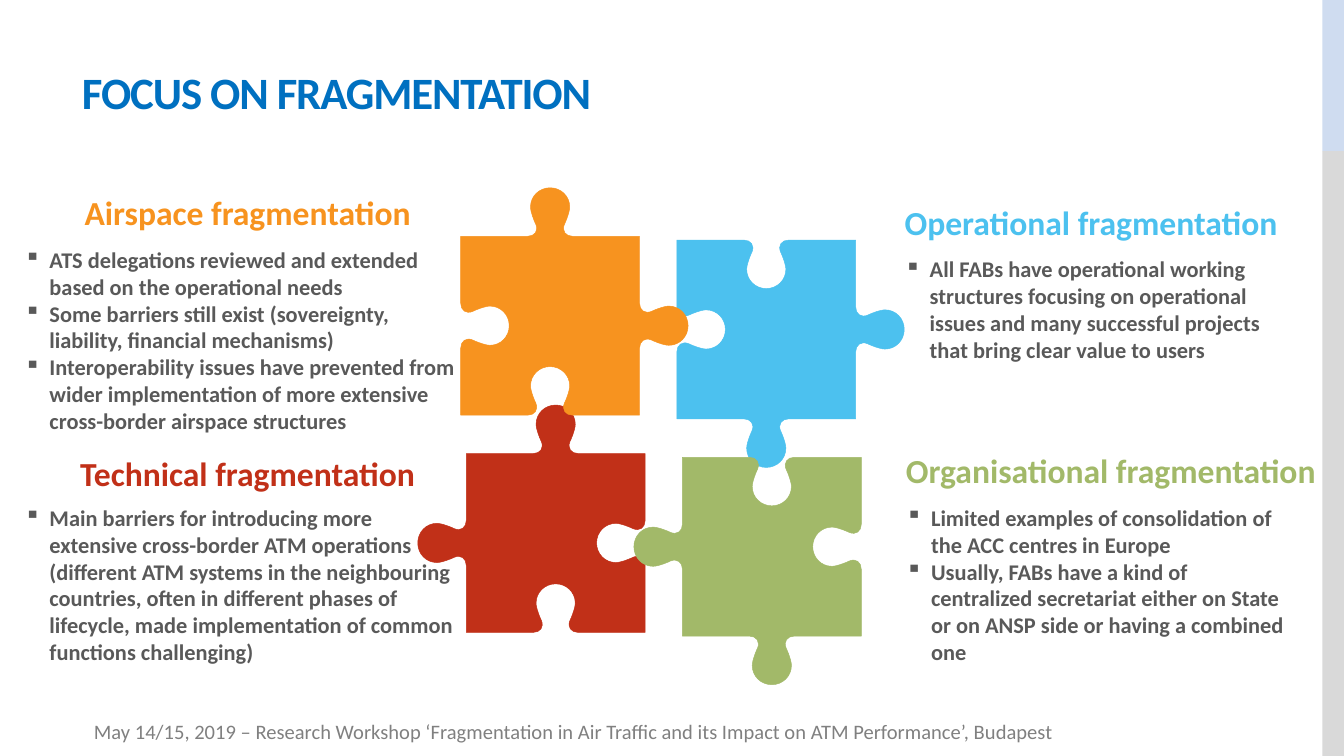
from lxml.etree import SubElement
from pptx import Presentation
from pptx.dml.color import RGBColor
from pptx.enum.shapes import MSO_SHAPE
from pptx.enum.text import MSO_ANCHOR, MSO_AUTO_SIZE, PP_ALIGN
from pptx.oxml.ns import qn
from pptx.util import Pt

COLORS = {
    "title": "0070C0", "body": "595959", "footer": "808080",
    "band_top": "CFDCF0", "band": "D9D9D9",
    "airspace": "F7931F", "operational": "4CC1EF",
    "technical": "C13018", "organisational": "A2B969",
}
FONT = "Calibri"
SIDE = 95.8
# Half of a puzzle knob, (offset from the middle of the side, height):
# the foot, then three Bezier curves of three points each
KNOB = [
    (12, 0),
    (8.3, 0), (6.1, 2.9), (7.7, 6.5),
    (8, 7), (10.5, 12.8), (10.5, 15.7),
    (10.5, 21.5), (5.8, 26), (0, 26),
]
TAB, SOCKET = 1, -1


def rgb(name):
    return RGBColor.from_string(COLORS[name])


def add_run(p, text, size, color, bold=False):
    r = p.add_run()
    r.text = text
    r.font.name = FONT
    r.font.size = Pt(size)
    r.font.bold = bold
    r.font.color.rgb = rgb(color)
    return r


def set_frame(tf, anchor=MSO_ANCHOR.TOP, side=0):
    tf.word_wrap = True
    tf.auto_size = MSO_AUTO_SIZE.NONE
    tf.vertical_anchor = anchor
    tf.margin_left = tf.margin_right = Pt(side)
    tf.margin_top = tf.margin_bottom = Pt(3.6)


def add_title(s, box, text):
    title = s.shapes.title
    title.left, title.top, title.width, title.height = (Pt(v) for v in box)
    set_frame(title.text_frame, side=7.2)
    p = title.text_frame.paragraphs[0]
    p.alignment = PP_ALIGN.LEFT
    r = add_run(p, text, 24, "title", True)
    r.font._element.set("spc", "-60")


def add_text_box(s, box, anchor=MSO_ANCHOR.TOP, side=0):
    sp = s.shapes.add_textbox(*(Pt(v) for v in box))
    set_frame(sp.text_frame, anchor, side)
    return sp.text_frame


def add_heading(s, box, text, color, align):
    p = add_text_box(s, box, MSO_ANCHOR.BOTTOM).paragraphs[0]
    p.alignment = align
    add_run(p, text, 18, color, True)


def add_bullets(s, box, items):
    tf = add_text_box(s, box)
    for i, item in enumerate(items):
        p = tf.add_paragraph() if i else tf.paragraphs[0]
        pPr = p._p.get_or_add_pPr()
        pPr.set("marL", str(Pt(13.5)))
        pPr.set("indent", str(-Pt(13.5)))
        SubElement(pPr, qn("a:buChar")).set("char", "▪")
        add_run(p, item, 12, "body", True)


def add_side_band(s, box):
    left, top, width, height = box
    split = height / 5
    for y, h, color in ((top, split, "band_top"),
                        (top + split, height - split, "band")):
        sp = s.shapes.add_shape(MSO_SHAPE.RECTANGLE, Pt(left), Pt(y), Pt(width), Pt(h))
        sp.shadow.inherit = False
        sp.fill.solid()
        sp.fill.fore_color.rgb = rgb(color)
        sp.line.fill.background()


def side_profile():
    """Corner, foot of the knob, then six curves: (distance along, height)."""
    rising = [(SIDE / 2 - x, y) for x, y in KNOB]
    falling = [(SIDE / 2 + x, y) for x, y in reversed(KNOB[:-1])]
    return [(0, 0)] + rising + falling


def round_knobs(sp, count):
    """Merge each three segments of a knob into one Bezier curve."""
    outline = sp._element.find(".//" + qn("a:path"))
    segments = outline.findall(qn("a:lnTo"))
    for corner in range(0, len(segments), count):
        for i in range(corner + 1, corner + count - 1, 3):
            curve, *rest = segments[i:i + 3]
            curve.tag = qn("a:cubicBezTo")
            for segment in rest:
                curve.append(segment[0])
                outline.remove(segment)


def add_piece(s, left, top, color, sides):
    """Puzzle piece with its knobs listed as top, right, bottom, left."""
    x, y, dx, dy = left, top, 1, 0
    profile = side_profile()
    points = []
    for knob in sides:
        for along, height in profile:
            out = height * knob
            points.append((Pt(x + along * dx + out * dy), Pt(y + along * dy - out * dx)))
        x, y = x + SIDE * dx, y + SIDE * dy
        dx, dy = -dy, dx
    builder = s.shapes.build_freeform(*points[0])
    builder.add_line_segments(points[1:], close=True)
    sp = builder.convert_to_shape()
    round_knobs(sp, len(profile))
    sp.shadow.inherit = False
    sp.fill.solid()
    sp.fill.fore_color.rgb = rgb(color)
    sp.line.color.rgb = rgb(color)
    sp.line.width = Pt(0.25)


def add_puzzle(s, left, top):
    """Four pieces on a slightly skewed two by two grid."""
    pieces = [
        ("technical", 0, 1, (TAB, SOCKET, SOCKET, TAB)),
        ("operational", 1, 0, (SOCKET, TAB, TAB, SOCKET)),
        ("organisational", 1, 1, (SOCKET, SOCKET, TAB, TAB)),
        ("airspace", 0, 0, (TAB, TAB, SOCKET, SOCKET)),
    ]
    for color, col, row, sides in pieces:
        add_piece(s, left + 115.8 * col + 3 * row, top + 2 * col + 116.4 * row, color, sides)


def add_footer(s, box, text):
    add_run(add_text_box(s, box, side=7.2).paragraphs[0], text, 11, "footer")


TOPICS = [
    ("airspace", "Airspace fragmentation", (-10.8, 99.4, 231, 28.8), PP_ALIGN.RIGHT,
     (13, 128.2, 231, 108.7),
     ["ATS delegations reviewed and extended based on the operational needs",
      "Some barriers still exist (sovereignty, liability, financial mechanisms)",
      "Interoperability issues have prevented from wider implementation of more "
      "extensive cross-border airspace structures"]),
    ("operational", "Operational fragmentation", (484.6, 104.4, 204, 28.8), PP_ALIGN.LEFT,
     (484.6, 133.2, 205, 65.5),
     ["All FABs have operational working structures focusing on operational issues "
      "and many successful projects that bring clear value to users"]),
    ("technical", "Technical fragmentation", (-8.6, 239, 231, 28.8), PP_ALIGN.RIGHT,
     (13, 266.4, 231, 94.3),
     ["Main barriers for introducing more extensive cross-border ATM operations "
      "(different ATM systems in the neighbouring countries, often in different phases "
      "of lifecycle, made implementation of common functions challenging)"]),
    ("organisational", "Organisational fragmentation", (485.3, 237.6, 231, 28.8), PP_ALIGN.LEFT,
     (485.3, 266.4, 203, 94.3),
     ["Limited examples of consolidation of the ACC centres in Europe",
      "Usually, FABs have a kind of centralized secretariat either on State or on "
      "ANSP side or having a combined one"]),
]


def main():
    prs = Presentation()
    prs.slide_width, prs.slide_height = Pt(720), Pt(405)
    s = prs.slides.add_slide(prs.slide_layouts[5])
    add_side_band(s, (708.5, 0, 11.5, 405))
    add_title(s, (36.7, 31, 455.8, 33.8), "FOCUS ON FRAGMENTATION")
    add_puzzle(s, 246.8, 126.6)
    for color, heading, heading_box, align, bullet_box, items in TOPICS:
        add_heading(s, heading_box, heading, color, align)
        add_bullets(s, bullet_box, items)
    add_footer(s, (43.2, 381.6, 622.8, 18.7),
               "May 14/15, 2019 – Research Workshop ‘Fragmentation in Air Traffic "
               "and its Impact on ATM Performance’, Budapest")
    prs.save("out.pptx")


if __name__ == "__main__":
    main()
